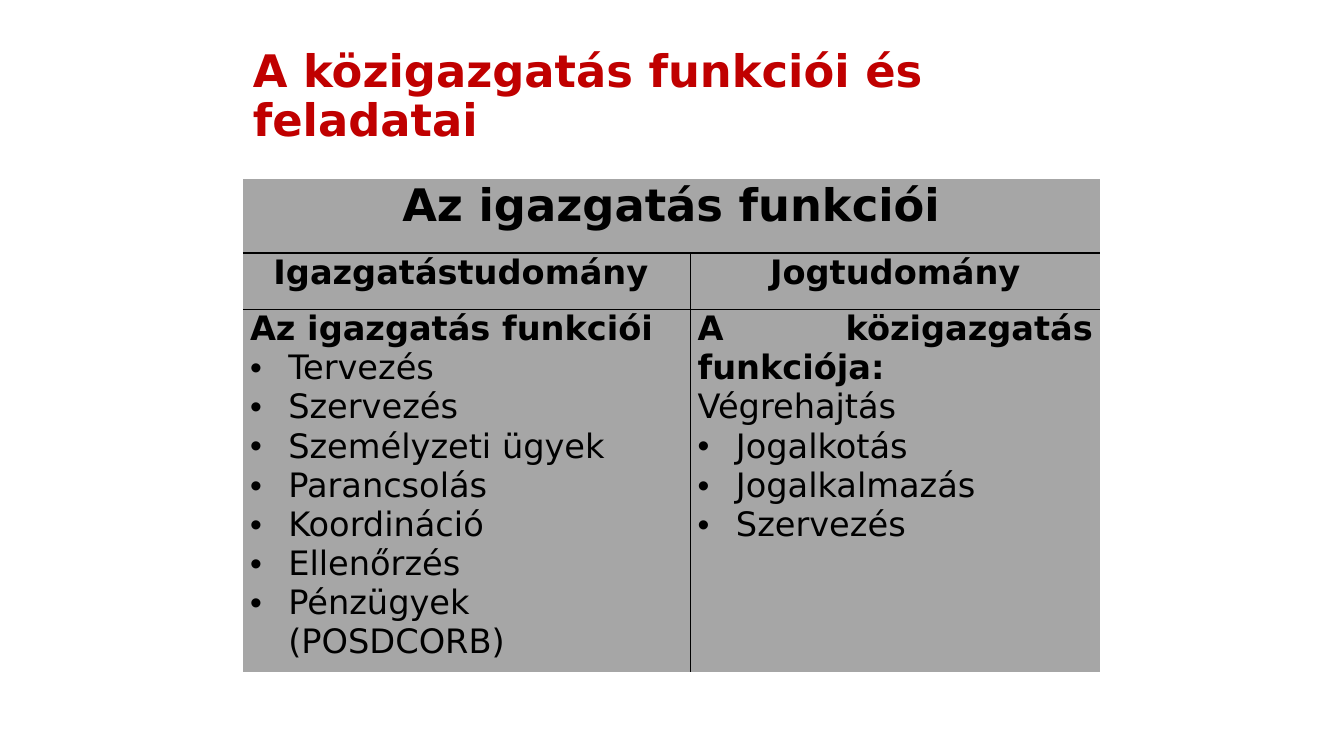
import pptx
import pptx.dml.color
import pptx.enum.text
import pptx.oxml
import pptx.oxml.ns
import pptx.util

RED = pptx.dml.color.RGBColor(0xC0, 0x00, 0x00)
BLACK = pptx.dml.color.RGBColor(0x00, 0x00, 0x00)
GRAY = pptx.dml.color.RGBColor(0xA6, 0xA6, 0xA6)
FONT = "DejaVu Sans"
WIDTH, HEIGHT = pptx.util.Inches(13.33), pptx.util.Inches(7.5)
LEFT, CONTENT_WIDTH = pptx.util.Inches(2.41), pptx.util.Inches(8.5)
COLUMNS = (4.44, 4.06)
ROWS = (0.73, 0.56, 3.47)
INDENT = pptx.util.Inches(0.38)
ALIGN = pptx.enum.text.PP_ALIGN
MANAGEMENT = ("Tervezés", "Szervezés", "Személyzeti ügyek", "Parancsolás",
              "Koordináció", "Ellenőrzés", "Pénzügyek (POSDCORB)")
LAW = ("Jogalkotás", "Jogalkalmazás", "Szervezés")


def set_font(paragraph, size, color, bold):
    """Set the font of a whole paragraph."""
    font = paragraph.font
    font.name, font.size, font.bold = FONT, pptx.util.Pt(size), bold
    font.color.rgb = color


def add_bullet(paragraph):
    """Give a paragraph a hanging round bullet."""
    properties = paragraph._p.get_or_add_pPr()
    properties.set("marL", str(INDENT))
    properties.set("indent", str(-INDENT))
    namespace = pptx.oxml.ns.nsdecls("a")
    for element in (f'<a:buFont {namespace} typeface="Arial"/>',
                    f'<a:buChar {namespace} char="•"/>'):
        properties.append(pptx.oxml.parse_xml(element))


def write_cell(cell, lines, alignment, size=24):
    """Write (text, bold, bulleted) lines into a cell."""
    frame = cell.text_frame
    for number, (text, bold, bulleted) in enumerate(lines):
        paragraph = frame.add_paragraph() if number else frame.paragraphs[0]
        paragraph.text = text
        paragraph.alignment = alignment
        if bulleted:
            add_bullet(paragraph)
        set_font(paragraph, size, BLACK, bold)


def style_cell(cell, row, column):
    """Draw the inner borders of a cell, then fill it."""
    inner = {"lnL": column > 0 and row > 0,
             "lnR": column < len(COLUMNS) - 1 and row > 0,
             "lnT": row > 0, "lnB": row < len(ROWS) - 1}
    properties = cell._tc.get_or_add_tcPr()
    for side, visible in inner.items():
        paint = (f'<a:solidFill><a:srgbClr val="{BLACK}"/></a:solidFill>'
                 if visible else "<a:noFill/>")
        properties.append(pptx.oxml.parse_xml(
            f'<a:{side} {pptx.oxml.ns.nsdecls("a")} w="{pptx.util.Pt(1)}">'
            f'{paint}</a:{side}>'))
    cell.fill.solid()
    cell.fill.fore_color.rgb = GRAY
    cell.margin_left = cell.margin_right = pptx.util.Inches(0.07)
    cell.margin_top = cell.margin_bottom = 0


def add_title(slide, text):
    """Add the slide title."""
    shape = slide.shapes.add_textbox(LEFT, pptx.util.Inches(0.29),
                                     CONTENT_WIDTH, pptx.util.Inches(1.35))
    frame = shape.text_frame
    frame.word_wrap = True
    frame.vertical_anchor = pptx.enum.text.MSO_ANCHOR.MIDDLE
    paragraph = frame.paragraphs[0]
    paragraph.text = text
    paragraph.line_spacing = 0.9
    set_font(paragraph, 32, RED, True)


def add_grid(slide):
    """Add the empty, styled table and return it."""
    table = slide.shapes.add_table(
        len(ROWS), len(COLUMNS), LEFT, pptx.util.Inches(1.78),
        CONTENT_WIDTH, pptx.util.Inches(sum(ROWS))).table
    for column, width in zip(table.columns, COLUMNS):
        column.width = pptx.util.Inches(width)
    for row, height in zip(table.rows, ROWS):
        row.height = pptx.util.Inches(height)
    for row in range(len(ROWS)):
        for column in range(len(COLUMNS)):
            style_cell(table.cell(row, column), row, column)
    table.cell(0, 0).merge(table.cell(0, 1))
    return table


def main():
    """Build and save the slide."""
    presentation = pptx.Presentation()
    presentation.slide_width, presentation.slide_height = WIDTH, HEIGHT
    slide = presentation.slides.add_slide(presentation.slide_layouts[6])
    add_title(slide, "A közigazgatás funkciói és feladatai")
    table = add_grid(slide)
    write_cell(table.cell(0, 0), [("Az igazgatás funkciói", True, False)],
               ALIGN.CENTER, 32)
    for column, heading in enumerate(("Igazgatástudomány ", "Jogtudomány")):
        write_cell(table.cell(1, column), [(heading, True, False)], ALIGN.CENTER)
    write_cell(table.cell(2, 0),
               [("Az igazgatás funkciói", True, False)]
               + [(text, False, True) for text in MANAGEMENT], ALIGN.LEFT)
    write_cell(table.cell(2, 1),
               [("A közigazgatás funkciója:", True, False),
                ("Végrehajtás", False, False)]
               + [(text, False, True) for text in LAW], ALIGN.JUSTIFY)
    presentation.save("out.pptx")


if __name__ == "__main__":
    main()
